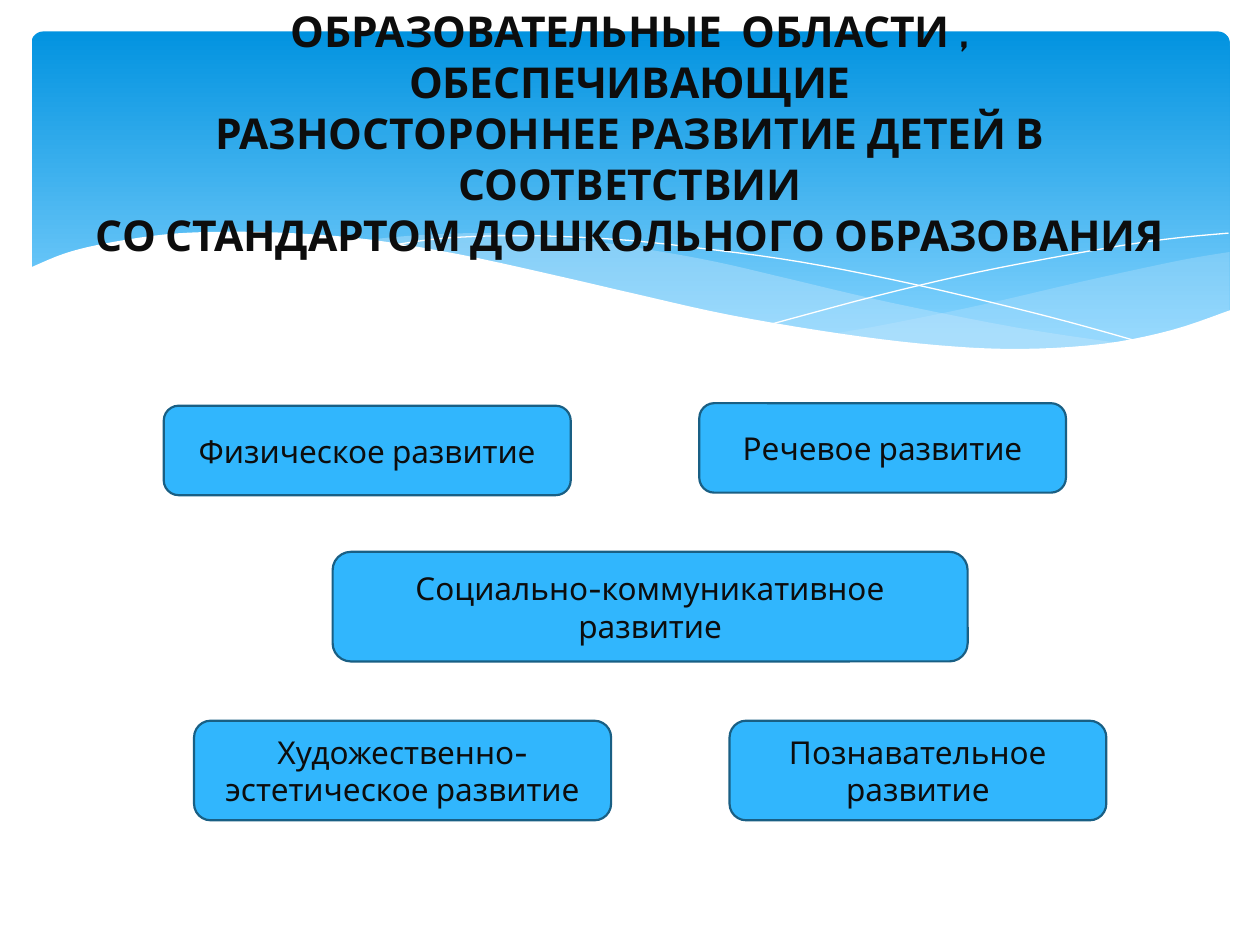
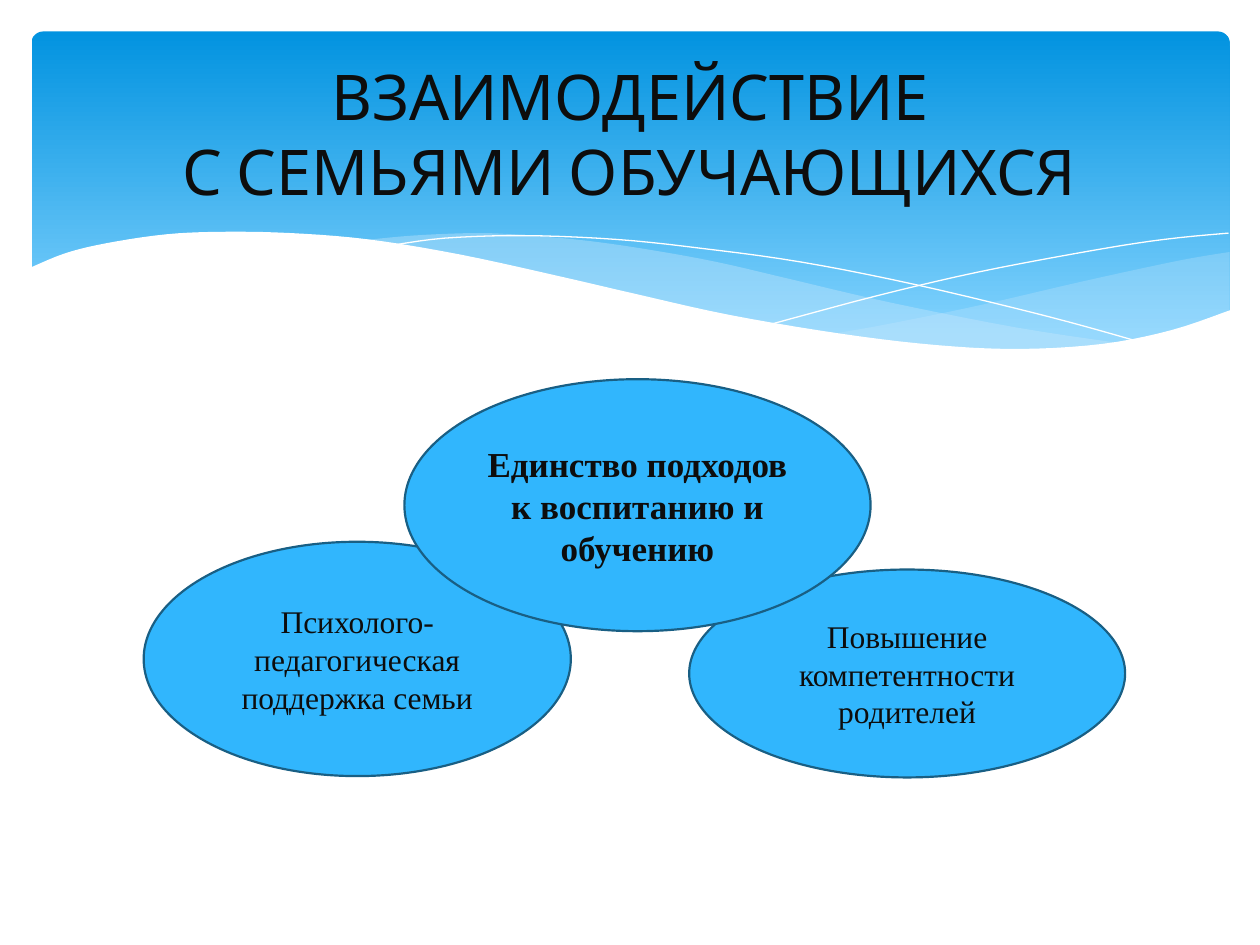
from dataclasses import dataclass

from lxml import etree
from pptx import Presentation
from pptx import util as u
from pptx.dml.color import RGBColor
from pptx.enum import shapes, text
from pptx.oxml.ns import qn


@dataclass(frozen=True)
class Theme:
    ink: str = "0D0D0D"
    paper: str = "FFFFFF"
    deep: str = "0293E0"
    pale: str = "83D3FE"
    mist: str = "C6E7FC"
    tile: str = "31B6FD"
    edge: str = "195F84"
    sans: str = "Cabin"
    serif: str = "Times New Roman"
    body: float = 18
    lead: float = 20
    dense: float = 24.3
    title: float = 36
    stroke: float = 1.25


# Key points of the curves in the title band, in inches
SWELL_TOP = [(9.76, 2), (9.35, 2.07), (8.61, 2.23), (7.79, 2.42), (7.06, 2.57), (6.61, 2.65)]
SWELL_LOW = [(6.61, 2.65), (7.05, 2.71), (7.57, 2.76), (8.14, 2.78), (8.72, 2.74),
             (9.21, 2.65), (9.49, 2.57), (9.76, 2.47)]
CREST_TOP = [(8.93, 2.73), (8.07, 2.6), (7.06, 2.4), (6.29, 2.22), (5.69, 2.08),
             (5.14, 1.98), (4.65, 1.91), (4.2, 1.87), (3.8, 1.85), (3.28, 1.87), (2.86, 1.91)]
CREST_LOW = [(2.86, 1.91), (3.42, 1.99), (4.04, 2.11), (4.49, 2.22), (5.3, 2.4),
             (6.01, 2.55), (6.65, 2.66), (7.22, 2.74), (7.73, 2.77), (8.28, 2.78), (8.93, 2.73)]
FALL = [(3.09, 1.95), (3.53, 1.89), (4.16, 1.87), (4.89, 1.9), (5.56, 1.97),
        (6.36, 2.08), (7.27, 2.26), (8.31, 2.51), (9.07, 2.72)]
RISE = [(6.13, 2.57), (6.95, 2.35), (7.76, 2.16), (8.66, 1.99), (9.24, 1.9), (9.75, 1.85)]
SHORE = [(9.77, 2.46), (9.3, 2.62), (8.75, 2.73), (8.09, 2.77), (7.44, 2.74), (6.68, 2.65),
         (5.79, 2.5), (5.03, 2.33), (4.47, 2.2), (3.65, 2.02), (2.92, 1.9), (2.3, 1.85),
         (1.77, 1.84), (1.32, 1.86), (0.85, 1.93), (0.52, 2.01), (0.23, 2.13)]
BASE = [(0.23, 3.29), (9.77, 3.29)]


def smooth(knots, steps=5):
    """Sample a Catmull-Rom curve through the knots."""
    ends = [knots[0], *knots, knots[-1]]
    curve = []
    for a, b, c, d in zip(ends, ends[1:], ends[2:], ends[3:]):
        for step in range(steps):
            t = step / steps
            curve.append(tuple(
                (2 * q + (r - p) * t + (2 * p - 5 * q + 4 * r - s) * t ** 2
                 + (3 * q - p - 3 * r + s) * t ** 3) / 2
                for p, q, r, s in zip(a, b, c, d)))
    return curve + [knots[-1]]


def tint(color):
    return RGBColor.from_string(color)


class Deck:
    def __init__(self, theme):
        self.theme = theme
        self.file = Presentation()
        self.file.slide_width, self.file.slide_height = u.Inches(10), u.Inches(7.5)
        self.slide = None

    def page(self, title, **style):
        self.slide = self.file.slides.add_slide(self.file.slide_layouts[6])
        self.band()
        self.head(title, **style)

    def paint(self, shape, fill=None, line=None, width=0, alpha=None):
        shape.shadow.inherit = False
        for part, color in ((shape.fill, fill), (shape.line.fill, line)):
            if color:
                part.solid()
                part.fore_color.rgb = tint(color)
            else:
                part.background()
        if line:
            shape.line.width = u.Pt(width)
        if alpha:
            color = shape.element.spPr.find(qn("a:solidFill")).find(qn("a:srgbClr"))
            etree.SubElement(color, qn("a:alpha"), val=str(alpha * 1000))

    def trace(self, points, close=True, **look):
        spots = [(u.Inches(x), u.Inches(y)) for x, y in points]
        pen = self.slide.shapes.build_freeform(*spots[0])
        pen.add_line_segments(spots[1:], close=close)
        self.paint(pen.convert_to_shape(), **look)

    def band(self):
        th = self.theme
        # Gradient panel
        box = [u.Inches(n) for n in (0.25, 0.25, 9.51, 2.7)]
        panel = self.slide.shapes.add_shape(shapes.MSO_SHAPE.ROUNDED_RECTANGLE, *box)
        panel.adjustments[0] = 0.034
        self.paint(panel)
        panel.fill.gradient()
        panel.fill.gradient_angle = 270
        for stop, color, place in zip(panel.fill.gradient_stops, (th.deep, th.pale), (0, 0.9)):
            stop.color.rgb = tint(color)
            stop.position = place
        # Waves
        self.trace(smooth(SWELL_TOP) + smooth(SWELL_LOW), fill=th.mist, alpha=29)
        self.trace(smooth(CREST_TOP) + smooth(CREST_LOW), fill=th.mist, alpha=40)
        for knots in (FALL, RISE):
            self.trace(smooth(knots), close=False, line=th.paper)
        self.trace(smooth(SHORE) + BASE, fill=th.paper)

    def label(self, shape, words, size, face, bold=False):
        frame = shape.text_frame
        form = {"word_wrap": True, "auto_size": text.MSO_AUTO_SIZE.NONE,
                "vertical_anchor": text.MSO_ANCHOR.MIDDLE}
        for key, value in form.items():
            setattr(frame, key, value)
        line = frame.paragraphs[0]
        line.text = words
        line.alignment = text.PP_ALIGN.CENTER
        for run in line.runs:
            for key, value in {"size": u.Pt(size), "name": face, "bold": bold}.items():
                setattr(run.font, key, value)
            run.font.color.rgb = tint(self.theme.ink)

    def head(self, words, size, bold=False):
        box = [u.Inches(n) for n in (0.5, 0.37, 9, 1.37)]
        self.label(self.slide.shapes.add_textbox(*box), words, size, self.theme.sans, bold)

    def tile(self, kind, box, words, face, size=None, bold=False):
        th = self.theme
        shape = self.slide.shapes.add_shape(kind, *[u.Inches(n) for n in box])
        self.paint(shape, th.tile, th.edge, th.stroke)
        self.label(shape, words, size or th.body, face, bold)


def main():
    theme = Theme()
    deck = Deck(theme)

    # Slide 1: learning areas
    deck.page("ОБРАЗОВАТЕЛЬНЫЕ  ОБЛАСТИ , ОБЕСПЕЧИВАЮЩИЕ\v"
              "РАЗНОСТОРОННЕЕ РАЗВИТИЕ ДЕТЕЙ В СООТВЕТСТВИИ\v"
              "СО СТАНДАРТОМ ДОШКОЛЬНОГО ОБРАЗОВАНИЯ", size=theme.dense, bold=True)
    areas = [
        ((5.55, 3.2, 2.91, 0.71), "Речевое развитие"),
        ((1.3, 3.22, 3.23, 0.71), "Физическое развитие"),
        ((2.64, 4.38, 5.04, 0.87), "Социально-коммуникативное развитие"),
        ((1.54, 5.72, 3.31, 0.79), "Художественно-эстетическое развитие"),
        ((5.79, 5.72, 2.99, 0.79), "Познавательное развитие"),
    ]
    for box, words in areas:
        deck.tile(shapes.MSO_SHAPE.ROUNDED_RECTANGLE, box, words, theme.sans)

    # Slide 2: work with families, main goal in front
    deck.page("ВЗАИМОДЕЙСТВИЕ\vС СЕМЬЯМИ ОБУЧАЮЩИХСЯ", size=theme.title)
    goals = [
        ((1.14, 4.3, 3.39, 1.86), "Психолого-педагогическая поддержка семьи", {}),
        ((5.47, 4.52, 3.46, 1.65), "Повышение компетентности родителей", {}),
        ((3.21, 3.01, 3.7, 2), "Единство подходов к воспитанию и обучению",
         {"size": theme.lead, "bold": True}),
    ]
    for box, words, style in goals:
        deck.tile(shapes.MSO_SHAPE.OVAL, box, words, theme.serif, **style)

    deck.file.save("out.pptx")


if __name__ == "__main__":
    main()
